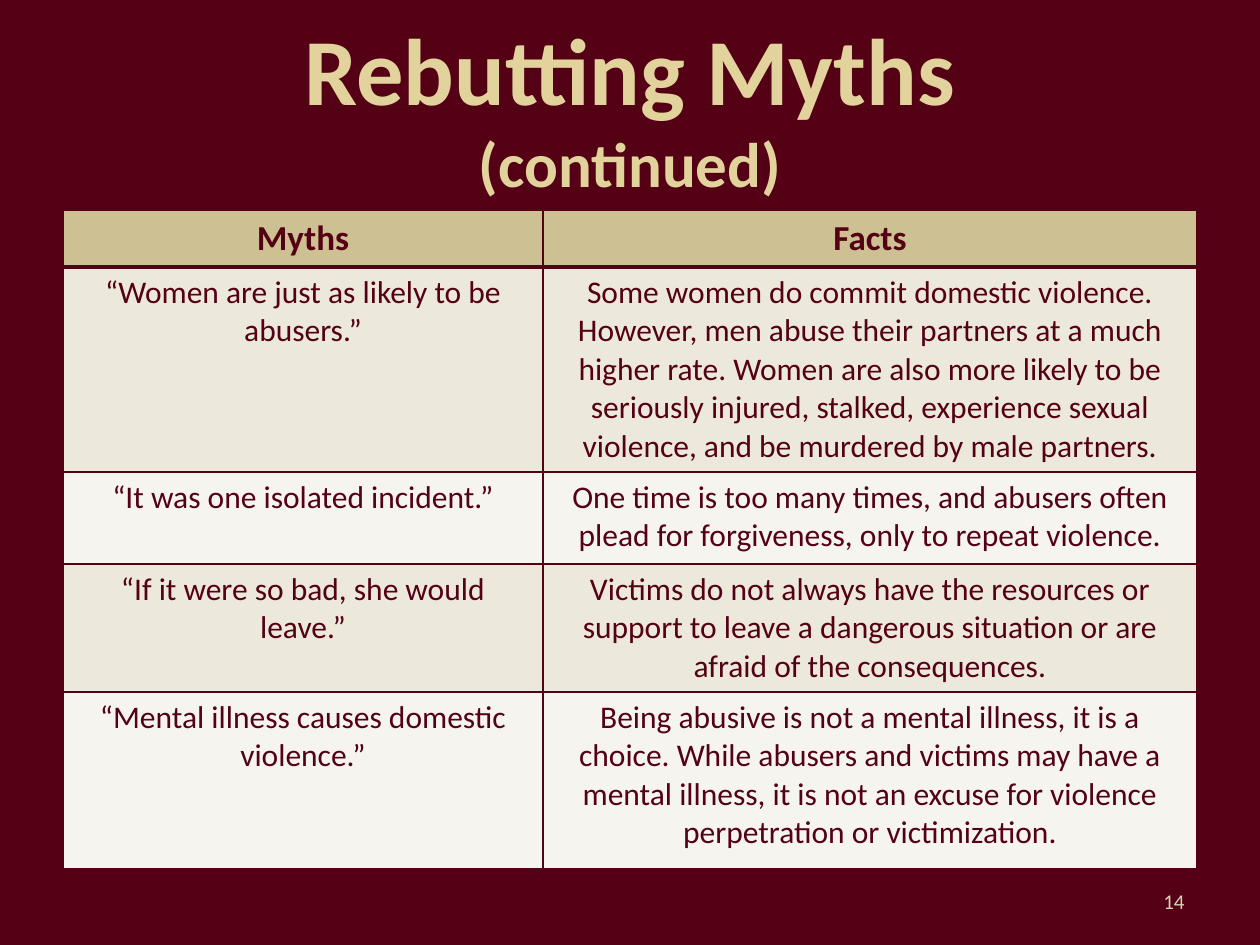
from lxml import etree
from pptx import Presentation
from pptx import util as u
from pptx.dml.color import RGBColor
from pptx.enum import text
from pptx.oxml import ns

MAROON = RGBColor(0x54, 0x01, 0x15)
GOLD = RGBColor(0xE2, 0xD2, 0x9C)
PALE_GOLD = RGBColor(0xDB, 0xD2, 0xB6)
HEADER = RGBColor(0xCD, 0xC0, 0x92)
BANDS = [RGBColor(0xED, 0xE8, 0xDC), RGBColor(0xF6, 0xF4, 0xEE)]

TITLE = [("Rebutting Myths", 54), ("(continued)", 36)]
PAGE_NUMBER = "14"
ROWS = [
    ("Myths", "Facts"),
    ("“Women are just as likely to be abusers.”",
     "Some women do commit domestic violence. However, men abuse their partners at a much "
     "higher rate. Women are also more likely to be seriously injured, stalked, experience "
     "sexual violence, and be murdered by male partners."),
    ("“It was one isolated incident.”",
     "One time is too many times, and abusers often plead for forgiveness, only to repeat "
     "violence."),
    ("“If it were so bad, she would leave.”",
     "Victims do not always have the resources or support to leave a dangerous situation or "
     "are afraid of the consequences."),
    ("“Mental illness causes domestic violence.”",
     "Being abusive is not a mental illness, it is a choice. While abusers and victims may "
     "have a mental illness, it is not an excuse for violence perpetration or victimization."),
]
COLUMN_WIDTHS = [3.81, 5.19]
ROW_HEIGHTS = [0.45, 1.59, 0.73, 0.99, 1.4]


def add_text(paragraph, content, size, color=MAROON, bold=False,
             align=text.PP_ALIGN.CENTER):
    paragraph.alignment = align
    run = paragraph.add_run()
    run.text = content
    run.font.name = "Calibri"
    run.font.size = u.Pt(size)
    run.font.bold = bold
    run.font.color.rgb = color


def set_borders(cell, top, bottom):
    properties = cell._tc.get_or_add_tcPr()
    widths = {"a:lnL": 1, "a:lnR": 1, "a:lnT": top, "a:lnB": bottom}
    for position, (tag, width) in enumerate(widths.items()):
        line = etree.Element(ns.qn(tag), w=str(u.Pt(width)))
        fill = etree.SubElement(line, ns.qn("a:solidFill"))
        etree.SubElement(fill, ns.qn("a:srgbClr"), val=str(MAROON))
        properties.insert(position, line)


def add_title(slide):
    title = slide.shapes.title
    title.left, title.top = u.Inches(0.5), u.Inches(0.17)
    title.width, title.height = u.Inches(9), u.Inches(1.33)
    frame = title.text_frame
    frame.auto_size = text.MSO_AUTO_SIZE.NONE
    frame.vertical_anchor = text.MSO_ANCHOR.MIDDLE
    paragraph = frame.paragraphs[0]
    for index, (content, size) in enumerate(TITLE):
        if index:
            paragraph.add_line_break()
        add_text(paragraph, content, size, color=GOLD, bold=True)


def add_myths_table(slide):
    table = slide.shapes.add_table(
        len(ROWS), len(COLUMN_WIDTHS), u.Inches(0.5), u.Inches(1.67),
        u.Inches(sum(COLUMN_WIDTHS)), u.Inches(sum(ROW_HEIGHTS))).table
    for column, width in zip(table.columns, COLUMN_WIDTHS):
        column.width = u.Inches(width)
    for index, (row, height, contents) in enumerate(zip(table.rows, ROW_HEIGHTS, ROWS)):
        row.height = u.Inches(height)
        is_header = index == 0
        for cell, content in zip(row.cells, contents):
            cell.fill.solid()
            cell.fill.fore_color.rgb = HEADER if is_header else BANDS[(index - 1) % 2]
            set_borders(cell, top=3 if index == 1 else 1, bottom=3 if is_header else 1)
            add_text(cell.text_frame.paragraphs[0], content,
                     20 if is_header else 18, bold=is_header)


def add_page_number(slide):
    box = slide.shapes.add_textbox(u.Inches(7.17), u.Inches(6.95),
                                   u.Inches(2.33), u.Inches(0.4))
    frame = box.text_frame
    frame.word_wrap = True
    frame.vertical_anchor = text.MSO_ANCHOR.MIDDLE
    add_text(frame.paragraphs[0], PAGE_NUMBER, 12, color=PALE_GOLD,
             align=text.PP_ALIGN.RIGHT)


def main():
    presentation = Presentation()
    presentation.slide_width, presentation.slide_height = u.Inches(10), u.Inches(7.5)
    slide = presentation.slides.add_slide(presentation.slide_layouts[5])
    slide.background.fill.solid()
    slide.background.fill.fore_color.rgb = MAROON
    add_title(slide)
    add_myths_table(slide)
    add_page_number(slide)
    presentation.save("out.pptx")


if __name__ == "__main__":
    main()
